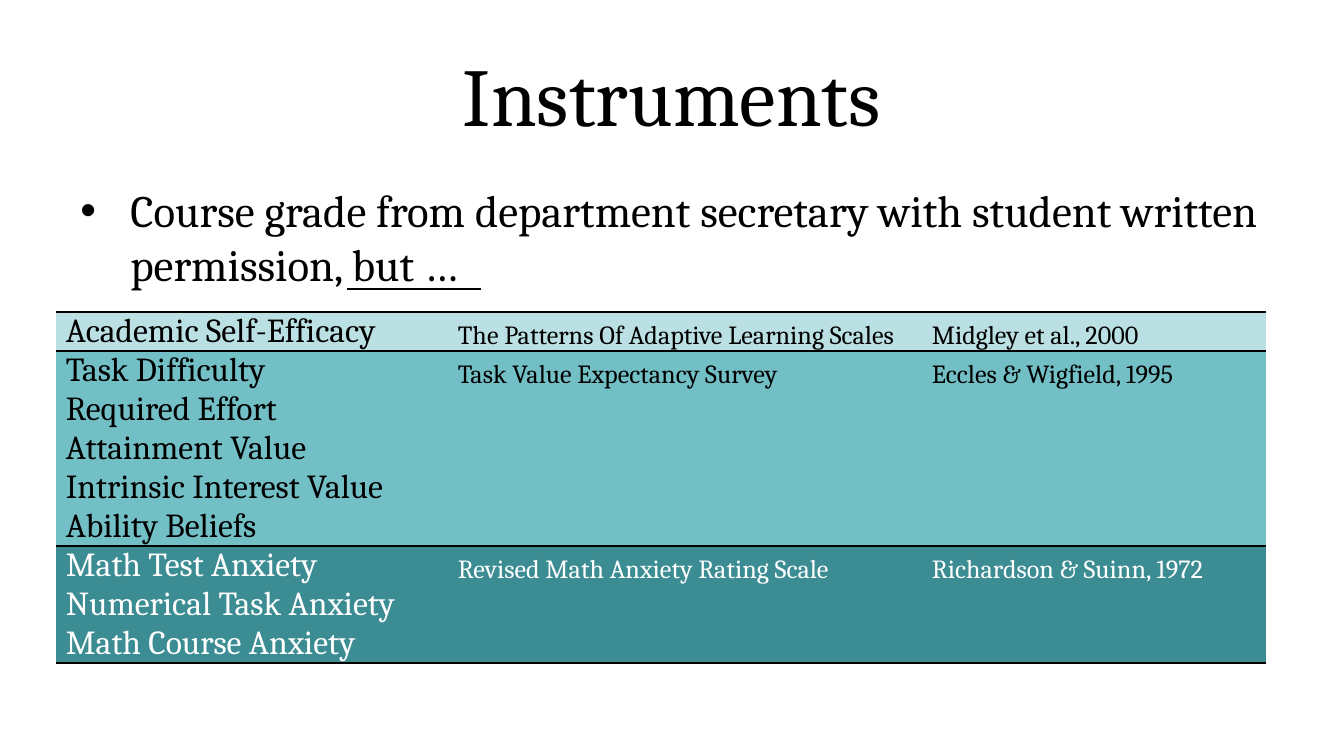
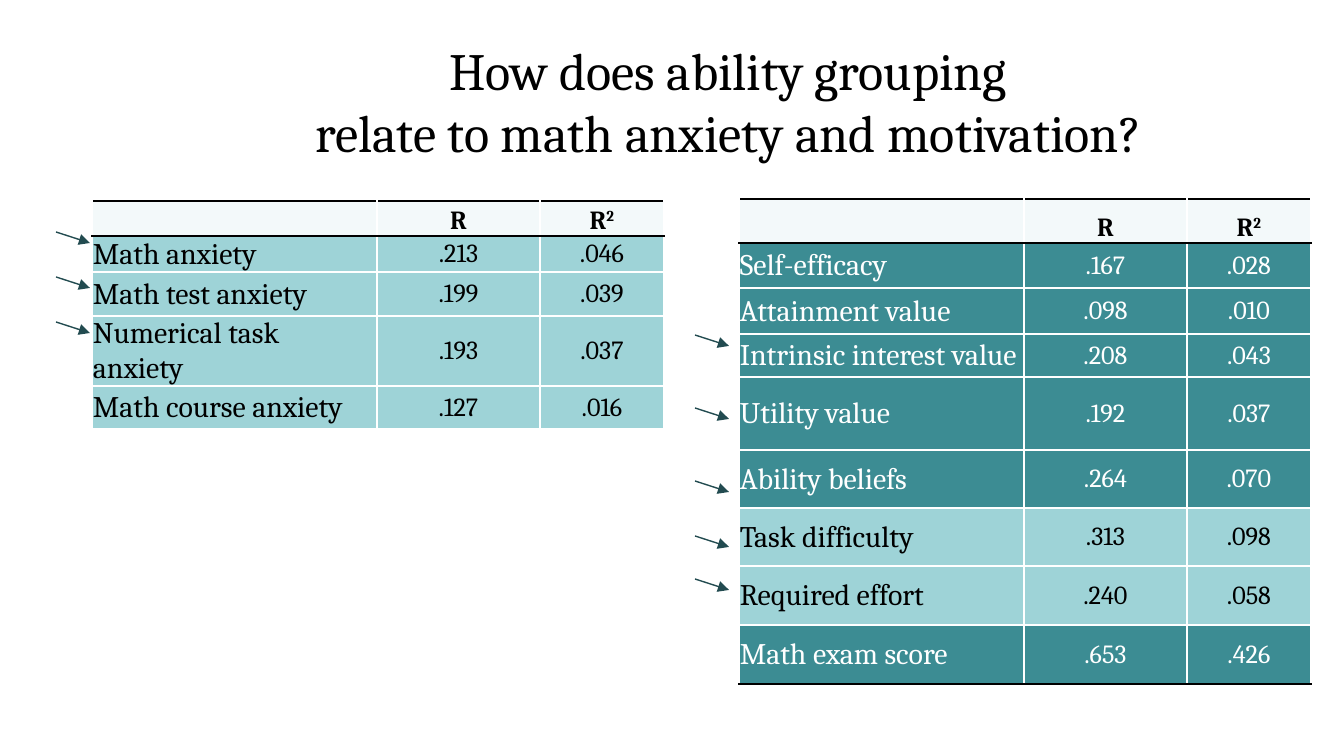
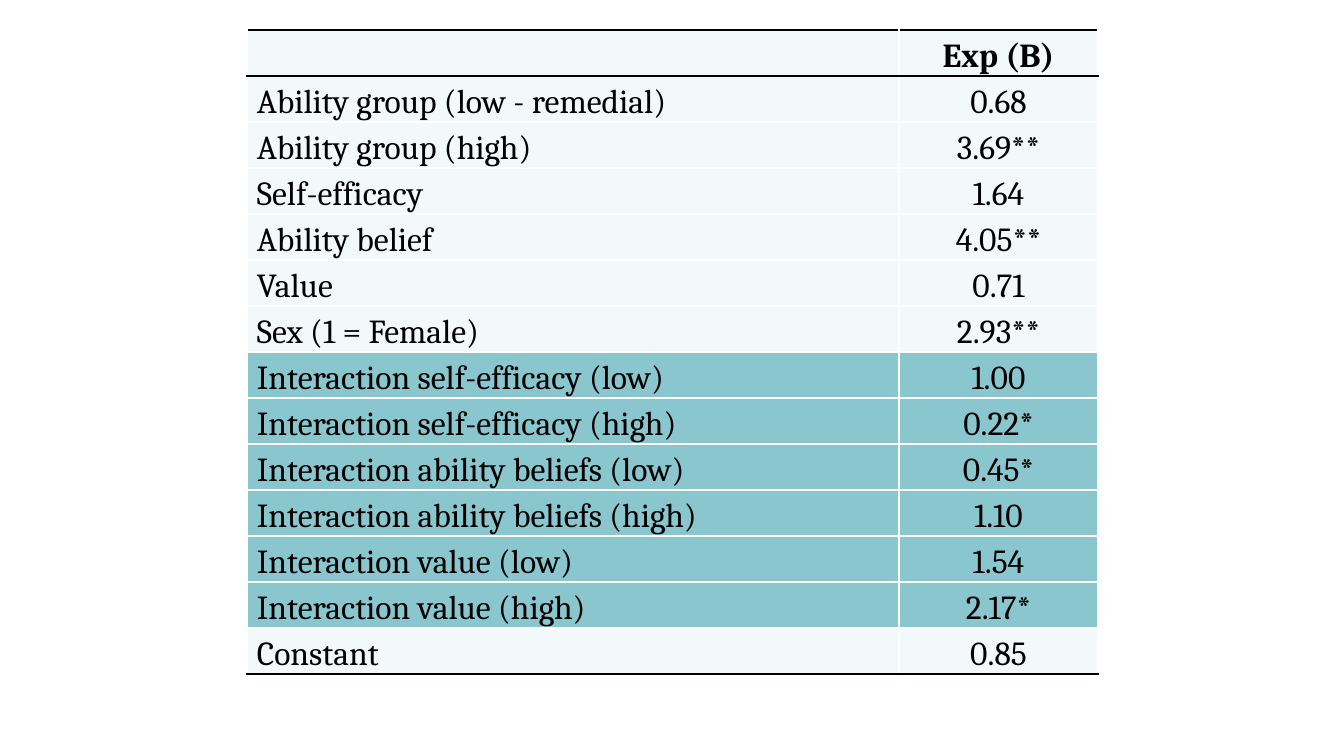
from lxml import etree
from pptx import Presentation
from pptx import util as u
from pptx.dml import color as dml
from pptx.enum import shapes, text
from pptx.oxml import ns

SCALE = 9144000 / 1344
FONT = "Cambria"
BLACK, WHITE = "000000", "FFFFFF"
MIST, ICE, AQUA = "F3F9FA", "BBE0E3", "9ED3D7"
SKY, TEAL, DEEP, INK = "8AC6CD", "72BFC5", "3C8C93", "224B50"
LEFT, CENTER = text.PP_ALIGN.LEFT, text.PP_ALIGN.CENTER
TOP, MIDDLE, BOTTOM = text.MSO_ANCHOR.TOP, text.MSO_ANCHOR.MIDDLE, text.MSO_ANCHOR.BOTTOM

INSTRUMENTS = [
    (ICE, "Academic Self-Efficacy", "The Patterns Of Adaptive Learning Scales", "Midgley et al., 2000"),
    (TEAL, "Task Difficulty", "Task Value Expectancy Survey", "Eccles & Wigfield, 1995"),
    (TEAL, "Required Effort", "", ""),
    (TEAL, "Attainment Value", "", ""),
    (TEAL, "Intrinsic Interest Value", "", ""),
    (TEAL, "Ability Beliefs", "", ""),
    (DEEP, "Math Test Anxiety", "Revised Math Anxiety Rating Scale", "Richardson & Suinn, 1972"),
    (DEEP, "Numerical Task Anxiety", "", ""),
    (DEEP, "Math Course Anxiety", "", ""),
]
CORRELATION_HEADER = (MIST, "", "R", "R²")
MOTIVATION = [
    CORRELATION_HEADER,
    (DEEP, "Self-efficacy", ".167", ".028"),
    (DEEP, "Attainment value", ".098", ".010"),
    (DEEP, "Intrinsic interest value", ".208", ".043"),
    (DEEP, "Utility value", ".192", ".037"),
    (DEEP, "Ability beliefs", ".264", ".070"),
    (AQUA, "Task difficulty", ".313", ".098"),
    (AQUA, "Required effort", ".240", ".058"),
    (DEEP, "Math exam score", ".653", ".426"),
]
ANXIETY = [
    CORRELATION_HEADER,
    (AQUA, "Math anxiety", ".213", ".046"),
    (AQUA, "Math test anxiety", ".199", ".039"),
    (AQUA, "Numerical task anxiety", ".193", ".037"),
    (AQUA, "Math course anxiety", ".127", ".016"),
]
REGRESSION = [
    (MIST, "", "Exp (B)"),
    (MIST, "Ability group (low - remedial)", "0.68"),
    (MIST, "Ability group (high)", "3.69**"),
    (MIST, "Self-efficacy", "1.64"),
    (MIST, "Ability belief", "4.05**"),
    (MIST, "Value", "0.71"),
    (MIST, "Sex (1 = Female)", "2.93**"),
    (SKY, "Interaction self-efficacy (low)", "1.00"),
    (SKY, "Interaction self-efficacy (high)", "0.22*"),
    (SKY, "Interaction ability beliefs (low)", "0.45*"),
    (SKY, "Interaction ability beliefs (high)", "1.10"),
    (SKY, "Interaction value (low)", "1.54"),
    (SKY, "Interaction value (high)", "2.17*"),
    (MIST, "Constant", "0.85"),
]

INSTRUMENT_STYLE = dict(sizes=(18, 14), aligns=(LEFT, LEFT), anchor=BOTTOM, margins=(10, 0),
                        header=False, grid=None)
CORRELATION_STYLE = dict(sizes=(16, 14), aligns=(LEFT, CENTER), anchor=MIDDLE, margins=(1, 1),
                         header=True, grid=WHITE)
REGRESSION_STYLE = dict(sizes=(18, 18), aligns=(LEFT, CENTER), anchor=BOTTOM, margins=(10, 0),
                        header=True, grid=WHITE)


def px(length):
    return u.Emu(round(length * SCALE))


def rgb(value):
    return dml.RGBColor.from_string(value)


def apply(target, **values):
    for name, value in values.items():
        setattr(target, name, value)


def child(parent, tag, **attributes):
    return etree.SubElement(parent, ns.qn(tag), attributes)


def add_run(paragraph, words, size, colour=BLACK, bold=False):
    run = paragraph.add_run()
    run.text = words
    apply(run.font, name=FONT, size=u.Pt(size), bold=bold)
    run.font.color.rgb = rgb(colour)
    return run


def place(shape, box, anchor):
    apply(shape, **dict(zip(("left", "top", "width", "height"), map(px, box))))
    apply(shape.text_frame, word_wrap=True, auto_size=text.MSO_AUTO_SIZE.NONE, vertical_anchor=anchor)
    return shape.text_frame.paragraphs[0]


def add_title(slide, box, lines, size, anchor=MIDDLE):
    paragraph = place(slide.shapes.title, box, anchor)
    paragraph.alignment = CENTER
    for index, line in enumerate(lines):
        if index:
            paragraph.add_line_break()
        add_run(paragraph, line, size)


def add_bullet(slide, box, words):
    paragraph = place(slide.placeholders[1], box, TOP)
    paragraph.space_before = u.Pt(0)
    properties = paragraph._p.get_or_add_pPr()
    properties.set("marL", str(px(50)))
    properties.set("indent", str(px(-50)))
    child(properties, "a:buChar", char="•")
    add_run(paragraph, words, 24)


def add_line(slide, start, end, colour, arrow=False):
    line = slide.shapes.add_connector(shapes.MSO_CONNECTOR.STRAIGHT, *map(px, start + end))
    line.line.color.rgb = rgb(colour)
    line.line.width = u.Pt(0.75)
    if arrow:
        child(line.line._get_or_add_ln(), "a:tailEnd", type="triangle")
    child(line._element.spPr, "a:effectLst")


def add_arrows(slide, left, tops):
    for top in tops:
        add_line(slide, (left, top), (left + 34, top + 11), INK, arrow=True)


def set_borders(cell, colours):
    properties = cell._tc.get_or_add_tcPr()
    for side, colour in zip("LRTB", colours):
        border = child(properties, f"a:ln{side}", w=str(u.Pt(1)))
        if colour:
            child(child(border, "a:solidFill"), "a:srgbClr", val=colour)
        else:
            child(border, "a:noFill")


def fill_cell(cell, words, size, align, colour, bold):
    paragraph = cell.text_frame.paragraphs[0]
    paragraph.alignment = align
    if not words:
        end = child(paragraph._p, "a:endParaRPr", sz="1400")
        child(end, "a:latin", typeface=FONT)
        return
    stem, square, _ = words.partition("²")
    add_run(paragraph, stem, size, colour, bold)
    if square:
        power = add_run(paragraph, "2", size, colour, bold)
        power._r.get_or_add_rPr().set("baseline", "30000")


def add_grid(slide, origin, widths, heights, rows, rules, style):
    frame = slide.shapes.add_table(len(rows), len(widths), *map(px, (*origin, sum(widths), sum(heights))))
    table = frame.table
    apply(table, first_row=False, horz_banding=False)
    for column, width in zip(table.columns, widths):
        column.width = px(width)
    for row, height in zip(table.rows, heights):
        row.height = px(height)
    grid = style["grid"]
    side, top = map(px, style["margins"])
    for r, (fill, *texts) in enumerate(rows):
        is_header = style["header"] and r == 0
        edges = [BLACK if edge in rules else grid for edge in (r, r + 1)]
        for c, words in enumerate(texts):
            cell = table.cell(r, c)
            apply(cell, margin_left=side, margin_right=side, margin_top=top, margin_bottom=0,
                  vertical_anchor=BOTTOM if is_header else style["anchor"])
            set_borders(cell, [grid, grid, *edges])
            cell.fill.solid()
            cell.fill.fore_color.rgb = rgb(fill)
            kind = min(c, 1)
            fill_cell(cell, words, style["sizes"][kind], style["aligns"][kind],
                      WHITE if fill == DEEP else BLACK, is_header)


def instruments_slide(slide):
    add_title(slide, (67, 31, 1210, 126), ["Instruments"], 44)
    add_bullet(slide, (67, 176, 1210, 499),
               "Course grade from department secretary with student written permission, but …")
    add_grid(slide, (56, 312), (392, 474, 344), [39] * len(INSTRUMENTS), INSTRUMENTS,
             {0, 1, 6, 9}, INSTRUMENT_STYLE)
    add_line(slide, (347, 289), (481, 289), BLACK)


def correlations_slide(slide):
    add_title(slide, (179, 31, 1098, 126),
              ["How does ability grouping", "relate to math anxiety and motivation?"], 28, TOP)
    widths = (285, 163, 124)
    add_grid(slide, (739, 199), widths, (44, 45, 46, 43, 73, 58, 58, 59, 59), MOTIVATION,
             {0, 1, 9}, CORRELATION_STYLE)
    add_grid(slide, (92, 201), widths, (35, 36, 44, 70, 43), ANXIETY, {0, 1}, CORRELATION_STYLE)
    add_arrows(slide, 56, range(232, 323, 45))
    add_arrows(slide, 695, (335, 408, 481, 536, 579))


def regression_slide(slide):
    add_grid(slide, (247, 30), (652, 199), [46] * len(REGRESSION), REGRESSION,
             {0, 1, 14}, REGRESSION_STYLE)


def main():
    presentation = Presentation()
    apply(presentation, slide_width=px(1344), slide_height=px(756))
    for layout, build in ((1, instruments_slide), (5, correlations_slide), (6, regression_slide)):
        build(presentation.slides.add_slide(presentation.slide_layouts[layout]))
    presentation.save("out.pptx")


if __name__ == "__main__":
    main()
